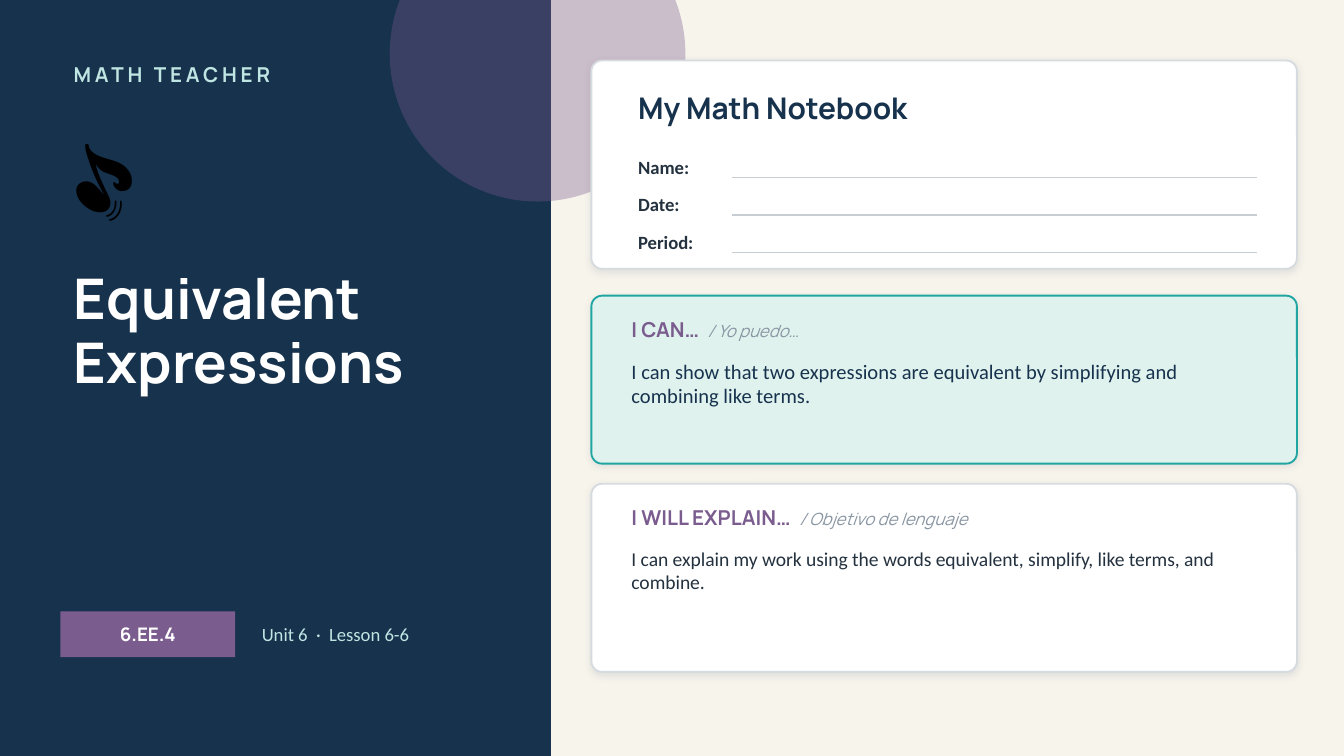
"""Build the opening slide of a math notebook lesson."""
from dataclasses import dataclass, field
from typing import Any, Optional

from lxml import etree
from pptx import Presentation
from pptx import util as u
from pptx.dml.color import RGBColor
from pptx.enum import shapes, text
from pptx.oxml.ns import qn

CELL = 0.1
COLUMNS, ROWS = 100, 56.25
CARD_LEFT, CARD_WIDTH, CARD_RADIUS = 44, 52.5, 0.8
NAVY, PURPLE, TEAL, MINT = "17324D", "7A5C8E", "1FA6A2", "BFE6E2"
WHITE, CREAM, INK, MUTED = "FFFFFF", "F7F4EC", "24323F", "8A96A3"
BORDER, RULE, PALE_GREEN, SHADE = "D6DBDF", "C7CDD2", "DFF2EE", "1C2E42"


@dataclass
class Box:
    """A place on the slide in grid columns and rows."""
    left: float
    top: float
    width: float
    height: float

    def lengths(self) -> list:
        """Return left, top, width and height as slide lengths."""
        return [grid(n) for n in (self.left, self.top, self.width, self.height)]


@dataclass
class Run:
    """A stretch of text with one format."""
    words: str
    size: float
    color: str
    name: str = "Calibri"
    bold: bool = False
    italic: bool = False
    spacing: float = 0


@dataclass
class Goal:
    """A card with a heading, its translation and a statement."""
    top: float
    height: float
    fill: str
    border: str
    heading: str
    translation: str
    statement: Run


@dataclass
class Label:
    """A text box and the runs in it."""
    box: Box
    runs: list[Run] = field(default_factory=list)
    anchor: Any = text.MSO_ANCHOR.MIDDLE


def grid(cells: float) -> u.Length:
    """Turn grid cells into a slide length."""
    return u.Inches(cells * CELL)


def color(value: str) -> RGBColor:
    """Turn a hex string into a colour."""
    return RGBColor.from_string(value)


def write(frame: Any, runs: list[Run], anchor: Any, align: Any = text.PP_ALIGN.LEFT) -> Any:
    """Fill a text frame with one paragraph and return that paragraph."""
    formats = {"word_wrap": True, "auto_size": text.MSO_AUTO_SIZE.NONE, "vertical_anchor": anchor}
    for key, value in formats.items():
        setattr(frame, key, value)
    paragraph = frame.paragraphs[0]
    paragraph.alignment = align
    for item in runs:
        run = paragraph.add_run()
        run.text = item.words
        formats = {"size": u.Pt(item.size), "name": item.name, "bold": item.bold, "italic": item.italic}
        for key, value in formats.items():
            setattr(run.font, key, value)
        run.font.color.rgb = color(item.color)
        if item.spacing:
            run.font._element.set("spc", str(int(item.spacing * 100)))
    return paragraph


def add_label(slide: Any, label: Label) -> None:
    """Add a text box."""
    shape = slide.shapes.add_textbox(*label.box.lengths())
    write(shape.text_frame, label.runs, label.anchor)


def add_block(slide: Any, kind: Any, box: Box, fill: str, border: Optional[str] = None) -> Any:
    """Add a filled shape, outlined when a border colour is given."""
    shape = slide.shapes.add_shape(kind, *box.lengths())
    shape.shadow.inherit = False
    shape.fill.solid()
    shape.fill.fore_color.rgb = color(fill)
    if border:
        shape.line.color.rgb = color(border)
        shape.line.width = u.Pt(1)
    else:
        shape.line.fill.background()
    return shape


def set_alpha(color_element: Any, percent: int) -> None:
    """Make a colour element partly transparent."""
    etree.SubElement(color_element, qn("a:alpha"), val=str(percent * 1000))


def add_card(slide: Any, top: float, height: float, fill: str, border: str) -> None:
    """Add a rounded card with a soft shadow."""
    box = Box(CARD_LEFT, top, CARD_WIDTH, height)
    card = add_block(slide, shapes.MSO_SHAPE.ROUNDED_RECTANGLE, box, fill, border)
    card.adjustments[0] = CARD_RADIUS / height
    effects = card.element.spPr.find(qn("a:effectLst"))
    shadow = etree.SubElement(effects, qn("a:outerShdw"), blurRad=str(u.Pt(4)), dist=str(u.Pt(1)),
                              dir="5400000", algn="bl", rotWithShape="0")
    set_alpha(etree.SubElement(shadow, qn("a:srgbClr"), val=SHADE), 10)


def add_rule(slide: Any, left: float, right: float, row: float) -> None:
    """Add a horizontal writing line."""
    ends = [grid(n) for n in (left, row, right, row)]
    rule = slide.shapes.add_connector(shapes.MSO_CONNECTOR.STRAIGHT, *ends)
    rule.line.color.rgb = color(RULE)
    rule.line.width = u.Pt(0.75)
    etree.SubElement(rule.element.spPr, qn("a:effectLst"))


def add_title(slide: Any, box: Box, run: Run) -> None:
    """Place the title placeholder in front of the shapes drawn so far."""
    title = slide.shapes.title
    for key, value in zip(("left", "top", "width", "height"), box.lengths()):
        setattr(title, key, value)
    paragraph = write(title.text_frame, [run], text.MSO_ANCHOR.TOP)
    paragraph.line_spacing = 0.95
    title.element.getparent().append(title.element)


def add_goal(slide: Any, goal: Goal) -> None:
    """Add a goal card with its texts."""
    add_card(slide, goal.top, goal.height, goal.fill, goal.border)
    left, width = CARD_LEFT + 2, CARD_WIDTH - 4
    heading = [Run(goal.heading + "  ", 11, PURPLE, "Manrope", bold=True),
               Run(goal.translation, 9, MUTED, "Manrope", italic=True)]
    add_label(slide, Label(Box(left, goal.top + 1, width, 3), heading))
    body = Box(left, goal.top + 4.2, width, goal.height - 4.7)
    add_label(slide, Label(body, [goal.statement], text.MSO_ANCHOR.TOP))


def add_cover(slide: Any) -> None:
    """Draw the dark panel with the lesson name."""
    kinds = shapes.MSO_SHAPE
    add_block(slide, kinds.RECTANGLE, Box(0, 0, 41, ROWS), NAVY)
    circle = add_block(slide, kinds.OVAL, Box(29, -7, 22, 22), PURPLE)
    set_alpha(circle.element.spPr.find(qn("a:solidFill"))[0], 35)
    add_label(slide, Label(Box(4.5, 4, 33, 3), [Run("MATH TEACHER", 11, MINT, "Manrope", True, spacing=2)]))
    add_label(slide, Label(Box(4.5, 8.5, 15, 9), [Run("🎵", 44, "000000")]))
    add_title(slide, Box(4.5, 19.5, 33, 17), Run("Equivalent Expressions", 30, WHITE, "Manrope", True))
    badge = add_block(slide, kinds.RECTANGLE, Box(4.5, 45.5, 13, 3.4), PURPLE)
    write(badge.text_frame, [Run("6.EE.4", 10, WHITE, "Manrope", True)],
          text.MSO_ANCHOR.MIDDLE, text.PP_ALIGN.CENTER)
    add_label(slide, Label(Box(18.5, 45.5, 21, 3.4), [Run("Unit 6  ·  Lesson 6-6", 10, MINT)]))


def add_notebook(slide: Any) -> None:
    """Draw the notebook card with its fields to fill in."""
    add_card(slide, 4.5, 15.5, WHITE, BORDER)
    left = CARD_LEFT + 2.5
    add_label(slide, Label(Box(left, 6, 48, 4), [Run("My Math Notebook", 16, NAVY, "Manrope", True)]))
    for index, name in enumerate(("Name:", "Date:", "Period:")):
        top = 11.2 + 2.8 * index
        add_label(slide, Label(Box(left, top, 8, 2.4), [Run(name, 10, INK, bold=True)]))
        add_rule(slide, left + 8, left + 47, top + 2)


def main() -> None:
    """Build and save the presentation."""
    presentation = Presentation()
    presentation.slide_width, presentation.slide_height = grid(COLUMNS), grid(ROWS)
    slide = presentation.slides.add_slide(presentation.slide_layouts.get_by_name("Title Only"))
    slide.background.fill.solid()
    slide.background.fill.fore_color.rgb = color(CREAM)
    add_cover(slide)
    add_notebook(slide)
    can = "I can show that two expressions are equivalent by simplifying and combining like terms."
    explain = "I can explain my work using the words equivalent, simplify, like terms, and combine."
    for goal in (
        Goal(22, 12.5, PALE_GREEN, TEAL, "I CAN…", "/ Yo puedo…", Run(can, 11, NAVY)),
        Goal(36, 14, WHITE, BORDER, "I WILL EXPLAIN…", "/ Objetivo de lenguaje", Run(explain, 10.5, INK)),
    ):
        add_goal(slide, goal)
    presentation.save("out.pptx")


if __name__ == "__main__":
    main()
